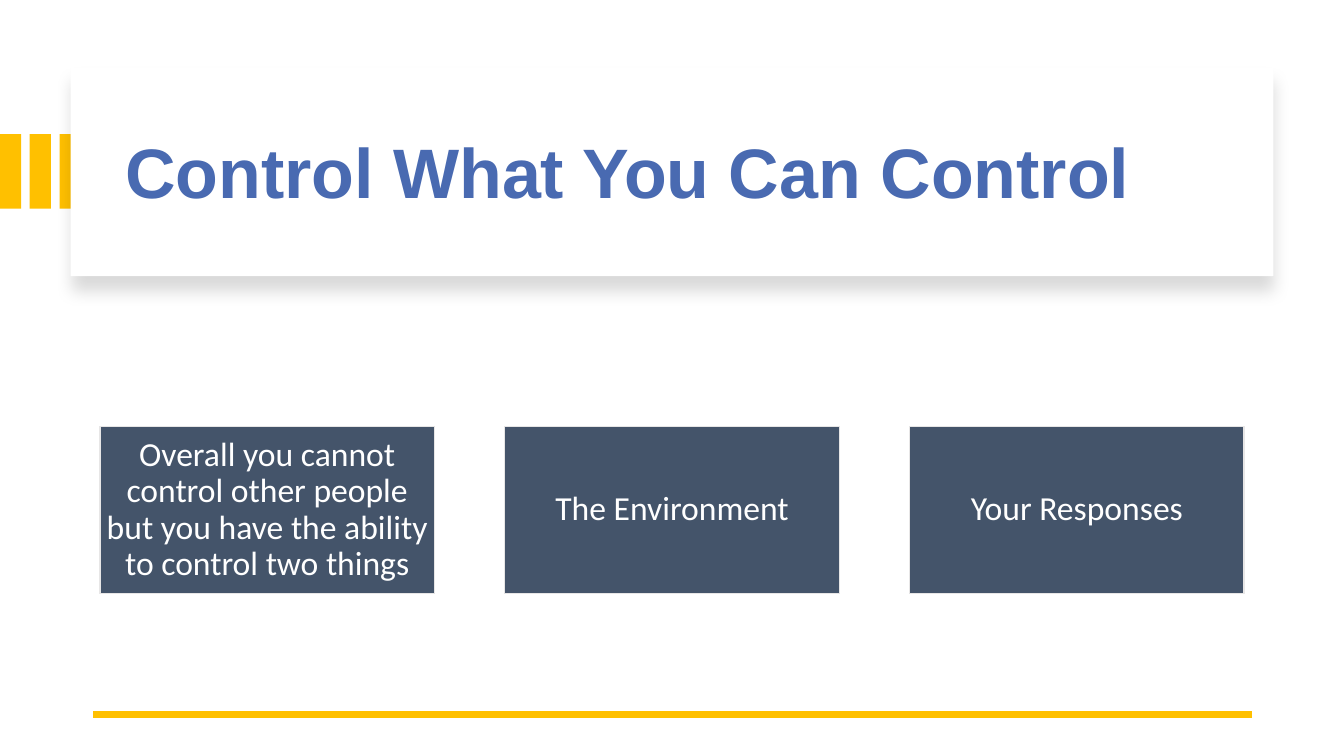
from lxml import etree
from pptx import Presentation, util as u
from pptx.dml.color import RGBColor
from pptx.enum import shapes, text
from pptx.oxml import parse_xml
from pptx.oxml.ns import nsdecls, qn

GOLD, BLUE, SLATE, WHITE, PALE = "FFC000", "496AB1", "44546A", "FFFFFF", "E7E6E6"


def colour(value):
    return RGBColor.from_string(value)


def add_box(page, left, top, width, height, fill, line=None):
    box = page.shapes.add_shape(
        shapes.MSO_SHAPE.RECTANGLE,
        u.Inches(left), u.Inches(top), u.Inches(width), u.Inches(height))
    box.shadow.inherit = False
    box.fill.solid()
    box.fill.fore_color.rgb = colour(fill)
    if line:
        box.line.color.rgb = colour(line)
        box.line.width = u.Pt(1)
    else:
        box.line.fill.background()
    return box


def write_text(box, words, size, font, ink, align, bold=False, inset=(0.1, 0.05)):
    frame = box.text_frame
    frame.word_wrap = True
    frame.auto_size = text.MSO_AUTO_SIZE.NONE
    frame.vertical_anchor = text.MSO_ANCHOR.MIDDLE
    frame.margin_left = frame.margin_right = u.Inches(inset[0])
    frame.margin_top = frame.margin_bottom = u.Inches(inset[1])
    para = frame.paragraphs[0]
    para.alignment = align
    para.line_spacing = 0.9
    span = para.add_run()
    span.text = words
    span.font.size = u.Pt(size)
    span.font.name = font
    span.font.bold = bold
    span.font.color.rgb = colour(ink)


def add_soft_shadow(box):
    effects = box.element.spPr.find(qn("a:effectLst"))
    effects.append(parse_xml(
        f'<a:outerShdw {nsdecls("a")} blurRad="{u.Pt(11)}" dist="{u.Pt(10)}" '
        'dir="5400000" algn="t" rotWithShape="0">'
        '<a:srgbClr val="000000"><a:alpha val="15000"/></a:srgbClr></a:outerShdw>'))


def add_rule(page, start, end, y, ink, weight):
    rule = page.shapes.add_connector(
        shapes.MSO_CONNECTOR.STRAIGHT,
        u.Inches(start), u.Inches(y), u.Inches(end), u.Inches(y))
    rule.line.color.rgb = colour(ink)
    rule.line.width = u.Pt(weight)
    etree.SubElement(rule.element.spPr, qn("a:effectLst"))


def place_title(page, words):
    title = page.shapes.title
    title.left, title.top = u.Inches(1.14), u.Inches(0.89)
    title.width, title.height = u.Inches(11.13), u.Inches(1.7)
    write_text(title, words, 50, "Arial", BLUE, text.PP_ALIGN.LEFT, bold=True)
    # Bring the title in front of its panel
    title.element.getparent().append(title.element)


def main():
    deck = Presentation()
    deck.slide_width, deck.slide_height = u.Inches(13.33), u.Inches(7.5)
    page = deck.slides.add_slide(deck.slide_layouts[5])

    # Gold bars at the left edge
    for index in range(3):
        add_box(page, index * 0.295, 1.33, 0.21, 0.74, GOLD)

    # Title on its raised panel
    panel = add_box(page, 0.7, 0.67, 11.93, 2.07, WHITE)
    add_soft_shadow(panel)
    place_title(page, "Control What You Can Control")

    # Three message boxes
    messages = [
        "Overall you cannot control other people but you have the ability "
        "to control two things",
        "The Environment",
        "Your Responses",
    ]
    for index, message in enumerate(messages):
        box = add_box(page, 0.99 + index * 4.015, 4.23, 3.32, 1.66, SLATE, PALE)
        write_text(box, message, 24, "Calibri", WHITE, text.PP_ALIGN.CENTER,
                   inset=(0.02, 0.02))

    # Rule at the foot
    add_rule(page, 12.42, 0.92, 7.09, GOLD, 4.5)

    deck.save("out.pptx")


if __name__ == "__main__":
    main()
